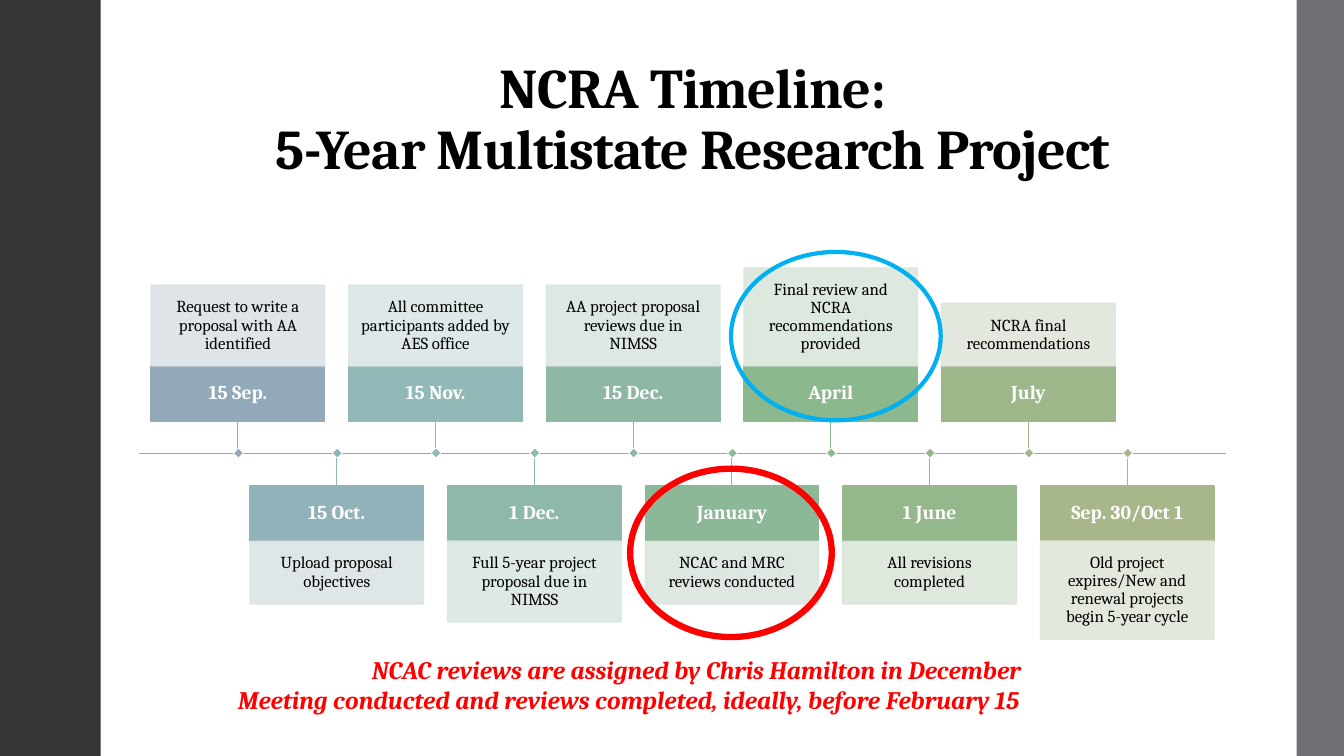
from lxml.etree import SubElement
from pptx import Presentation
from pptx.dml.color import RGBColor
from pptx.enum.shapes import MSO_CONNECTOR, MSO_SHAPE
from pptx.enum.text import MSO_ANCHOR, PP_ALIGN
from pptx.oxml.ns import qn
from pptx.util import Pt

PX = 9144

COLOURS = {
    "black": "000000", "white": "FFFFFF", "red": "FF0000", "blue": "00B0F0",
    "left band": "353537", "right band": "6F6F74", "axis": "92A9B9",
    "15 Sep.": "92A9B9", "15 Sep. tint": "DCE2E6",
    "15 Oct.": "91B2B9", "15 Oct. tint": "DCE4E6",
    "15 Nov.": "90B9B7", "15 Nov. tint": "DBE6E6",
    "1 Dec.": "8FB8AD", "1 Dec. tint": "DBE6E3",
    "15 Dec.": "8EB8A3", "15 Dec. tint": "DBE6E1",
    "January": "8DB898", "January tint": "DBE6DE",
    "April": "8CB88E", "April tint": "DAE6DB",
    "1 June": "94B78B", "1 June tint": "DCE6DA",
    "July": "9DB78A", "July tint": "DFE6DA",
    "Sep. 30/Oct 1": "A7B789", "Sep. 30/Oct 1 tint": "E1E6DA",
}

TITLE = {"name": "Cambria", "size": Pt(40), "bold": True, "colour": "black"}
DATE = {"name": "Cambria", "size": Pt(14), "bold": True, "colour": "white"}
TASK = {"name": "Cambria", "size": Pt(12), "colour": "black"}
NOTE = {"name": "Cambria", "size": Pt(18), "bold": True, "italic": True, "colour": "red"}

EVENTS = [
    ("15 Sep.", "Request to write a proposal with AA identified", 80),
    ("15 Oct.", "Upload proposal objectives", 62),
    ("15 Nov.", "All committee participants added by AES office", 80),
    ("1 Dec.", "Full 5-year project proposal due in NIMSS", 80),
    ("15 Dec.", "AA project proposal reviews due in NIMSS", 80),
    ("January", "NCAC and MRC reviews conducted", 62),
    ("April", "Final review and NCRA recommendations provided", 97),
    ("1 June", "All revisions completed", 62),
    ("July", "NCRA final recommendations", 62),
    ("Sep. 30/Oct 1", "Old project expires/New and renewal projects begin 5-year cycle", 97),
]

AXIS_Y = 450
FIRST_LEFT = 150
STEP = 98
BOX_WIDTH = 172
DATE_HEIGHT = 55
STEM = 32
DIAMOND = 7

presentation = Presentation()
presentation.slide_width = 1333 * PX
presentation.slide_height = 750 * PX
slide = presentation.slides.add_slide(presentation.slide_layouts[6])


def add_box(kind, bounds, fill=None, line=None, line_width=1.1):
    shape = slide.shapes.add_shape(kind, *(value * PX for value in bounds))
    shape.shadow.inherit = False
    if fill:
        shape.fill.solid()
        shape.fill.fore_color.rgb = RGBColor.from_string(COLOURS[fill])
    else:
        shape.fill.background()
    if line:
        shape.line.color.rgb = RGBColor.from_string(COLOURS[line])
        shape.line.width = Pt(line_width)
    else:
        shape.line.fill.background()
    return shape


def write_paragraph(paragraph, lines, style, alignment=PP_ALIGN.CENTER, spacing=0.9):
    paragraph.alignment = alignment
    paragraph.line_spacing = spacing
    for index, line in enumerate(lines):
        if index:
            paragraph.add_line_break()
        run = paragraph.add_run()
        run.text = line
        for name, value in style.items():
            if name == "colour":
                run.font.color.rgb = RGBColor.from_string(COLOURS[value])
            else:
                setattr(run.font, name, value)


title = slide.shapes.add_textbox(100 * PX, 40 * PX, 1186 * PX, 145 * PX)
title.text_frame.word_wrap = True
title.text_frame.vertical_anchor = MSO_ANCHOR.BOTTOM
title_paragraph = title.text_frame.paragraphs[0]
write_paragraph(
    title_paragraph, ["NCRA Timeline: ", "5-Year Multistate Research Project "], TITLE
)
for run in title_paragraph.runs:
    run._r.get_or_add_rPr().set("spc", "-50")

add_box(MSO_SHAPE.RECTANGLE, (0, 0, 100, 750), "left band")
add_box(MSO_SHAPE.RECTANGLE, (1286, 0, 50, 750), "right band")

lines = [(138, AXIS_Y, 1216, AXIS_Y, "axis", 1.1)]
for index, (date, task, task_height) in enumerate(EVENTS):
    left = FIRST_LEFT + STEP * index
    centre = left + BOX_WIDTH // 2
    if index % 2 == 0:
        stem_end = AXIS_Y - STEM
        date_top = stem_end - DATE_HEIGHT
        task_top = date_top - task_height
    else:
        stem_end = AXIS_Y + STEM
        date_top = stem_end
        task_top = date_top + DATE_HEIGHT
    lines.append((centre, stem_end, centre, AXIS_Y, date, 0.75))

    date_box = add_box(
        MSO_SHAPE.RECTANGLE, (left, date_top, BOX_WIDTH, DATE_HEIGHT), date, date
    )
    tint = f"{date} tint"
    task_box = add_box(
        MSO_SHAPE.RECTANGLE, (left, task_top, BOX_WIDTH, task_height), tint, tint
    )
    for colour in task_box._element.spPr.iter(qn("a:srgbClr")):
        SubElement(colour, qn("a:alpha"), val="90000")

    for box, text, style, inset in (
        (date_box, date, DATE, 8),
        (task_box, task, TASK, 12),
    ):
        frame = box.text_frame
        frame.word_wrap = True
        frame.vertical_anchor = MSO_ANCHOR.MIDDLE
        for side in ("left", "top", "right", "bottom"):
            setattr(frame, f"margin_{side}", inset * PX)
        write_paragraph(frame.paragraphs[0], [text], style)

for start_x, start_y, end_x, end_y, colour, width in lines:
    connector = slide.shapes.add_connector(
        MSO_CONNECTOR.STRAIGHT, start_x * PX, start_y * PX, end_x * PX, end_y * PX
    )
    connector.line.color.rgb = RGBColor.from_string(COLOURS[colour])
    connector.line.width = Pt(width)
    SubElement(connector._element.spPr, qn("a:effectLst"))

for index, (date, task, task_height) in enumerate(EVENTS):
    diamond_left = FIRST_LEFT + STEP * index + BOX_WIDTH // 2 - DIAMOND // 2
    diamond = add_box(
        MSO_SHAPE.RECTANGLE,
        (diamond_left, AXIS_Y - 4, DIAMOND, DIAMOND),
        date, "white", 0.5,
    )
    diamond.rotation = 45

add_box(MSO_SHAPE.OVAL, (625, 465, 200, 167), line="red", line_width=4.5)
add_box(MSO_SHAPE.OVAL, (725, 250, 208, 167), line="blue", line_width=3)

note = slide.shapes.add_textbox(226 * PX, 644 * PX, 935 * PX, 71 * PX)
note.text_frame.word_wrap = True
write_paragraph(
    note.text_frame.paragraphs[0],
    ["NCAC reviews are assigned by Chris Hamilton in December "],
    NOTE, spacing=1.0,
)
write_paragraph(
    note.text_frame.add_paragraph(),
    ["Meeting conducted and reviews completed, ideally, before February 15"],
    NOTE, PP_ALIGN.LEFT, 1.0,
)

presentation.save("out.pptx")
